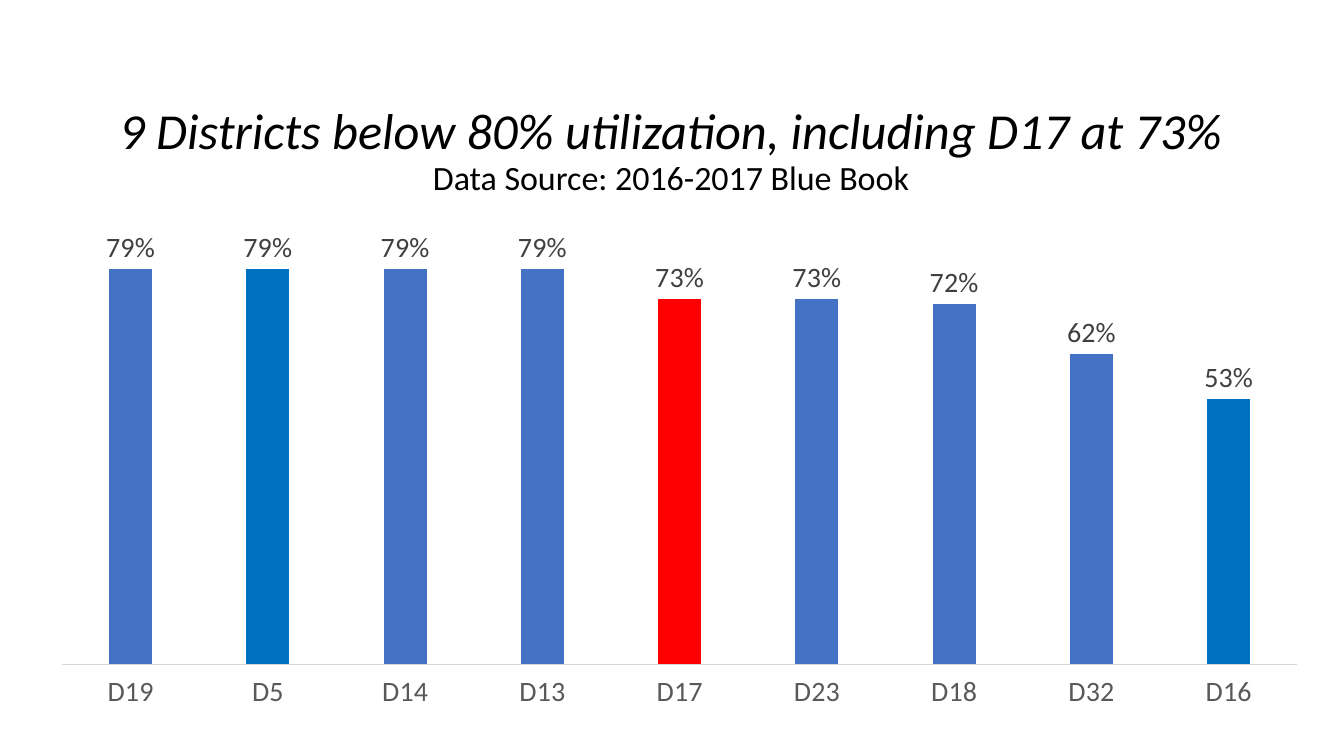
"""Build a slide charting the school districts below 80% utilization."""
from lxml import etree
from pptx import Presentation
from pptx.chart.data import CategoryChartData
from pptx.dml.color import RGBColor
from pptx.enum.chart import XL_CHART_TYPE, XL_LABEL_POSITION, XL_TICK_LABEL_POSITION, XL_TICK_MARK
from pptx.enum.text import MSO_ANCHOR, MSO_AUTO_SIZE, PP_ALIGN
from pptx.oxml.ns import qn
from pptx.util import Cm, Pt

COLORS = {
    "text": "000000",
    "bar": "4472C4",
    "accent": "0070C0",
    "highlight": "FF0000",
    "label": "404040",
    "district": "595959",
    "baseline": "D9D9D9",
}
UTILIZATION = {
    "D19": 0.79, "D5": 0.79, "D14": 0.79, "D13": 0.79, "D17": 0.73,
    "D23": 0.73, "D18": 0.72, "D32": 0.62, "D16": 0.53,
}
BAR_COLORS = {"D5": "accent", "D17": "highlight", "D16": "accent"}


def write(paragraph, text, size, italic=False, color="text"):
    """Add one centred line of formatted text."""
    paragraph.alignment = PP_ALIGN.CENTER
    paragraph.line_spacing = 0.9
    paragraph.space_before = Pt(0)
    line = paragraph.add_run()
    line.text = text
    line.font.name = "Calibri"
    line.font.size = Pt(size)
    line.font.italic = italic
    line.font.color.rgb = RGBColor.from_string(COLORS[color])


def style(font, size, color):
    """Set the font of a chart part."""
    font.name = "Calibri"
    font.size = Pt(size)
    font.color.rgb = RGBColor.from_string(COLORS[color])


deck = Presentation()
deck.slide_width, deck.slide_height = Cm(33.87), Cm(19.05)
slide = deck.slides.add_slide(deck.slide_layouts[5])

headline = slide.shapes.title
headline.left, headline.top = Cm(0.25), Cm(1.3)
headline.width, headline.height = Cm(33.32), Cm(3.68)
frame = headline.text_frame
frame.word_wrap = True
frame.auto_size = MSO_AUTO_SIZE.NONE
frame.vertical_anchor = MSO_ANCHOR.BOTTOM
frame.margin_bottom = Cm(0)
write(frame.paragraphs[0], "9 Districts below 80% utilization, including D17 at 73%", 36, italic=True)
write(frame.add_paragraph(), "Data Source: 2016-2017 Blue Book", 24.3)

data = CategoryChartData(number_format="0%")
data.categories = list(UTILIZATION)
data.add_series("Series 1", list(UTILIZATION.values()))
chart = slide.shapes.add_chart(
    XL_CHART_TYPE.COLUMN_CLUSTERED, Cm(0.99), Cm(5.05), Cm(31.9), Cm(13.39), data
).chart
chart.has_title = False
chart.has_legend = False
style(chart.font, 10, "text")

districts = chart.category_axis
districts.major_tick_mark = XL_TICK_MARK.NONE
districts.tick_label_position = XL_TICK_LABEL_POSITION.LOW
style(districts.tick_labels.font, 20, "district")
districts.format.line.color.rgb = RGBColor.from_string(COLORS["baseline"])
districts.format.line.width = Pt(0.75)

scale = chart.value_axis
scale.minimum_scale, scale.maximum_scale = 0, 0.9
scale.has_major_gridlines = False
scale.tick_labels.number_format = "0%"
scale.tick_labels.number_format_is_linked = False
scale.visible = False

columns = chart.plots[0]
columns.gap_width = 219
columns.overlap = -27
columns.vary_by_categories = False
bars = columns.series[0]
bars.format.fill.solid()
bars.format.fill.fore_color.rgb = RGBColor.from_string(COLORS["bar"])
for position, district in enumerate(UTILIZATION):
    if district in BAR_COLORS:
        fill = bars.points[position].format.fill
        fill.solid()
        fill.fore_color.rgb = RGBColor.from_string(COLORS[BAR_COLORS[district]])

percentages = bars.data_labels
percentages.show_value = True
percentages.position = XL_LABEL_POSITION.OUTSIDE_END
percentages.number_format = "0%"
percentages.number_format_is_linked = False
style(percentages.font, 20, "label")

plot_area = chart.element.find(f".//{qn('c:plotArea')}")
for old_layout in plot_area.findall(qn("c:layout")):
    plot_area.remove(old_layout)
layout = etree.Element(qn("c:layout"))
manual = etree.SubElement(layout, qn("c:manualLayout"))
for tag, value in {
    "layoutTarget": "inner", "xMode": "edge", "yMode": "edge",
    "x": "0.018", "y": "0.025", "w": "0.976", "h": "0.848",
}.items():
    etree.SubElement(manual, qn(f"c:{tag}")).set("val", value)
plot_area.insert(0, layout)

deck.save("out.pptx")
